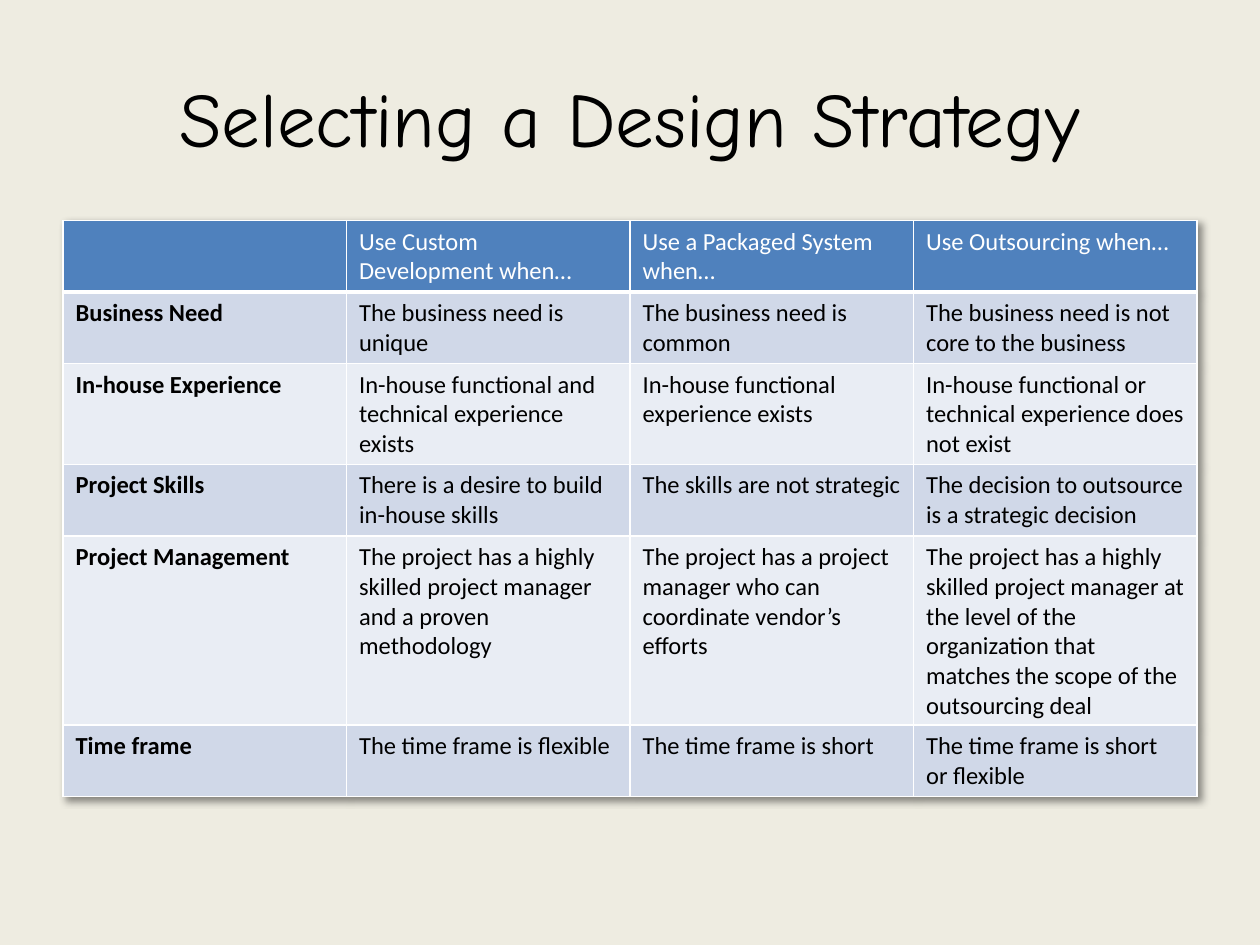
"""Build the slide that compares design strategies in a table."""
from dataclasses import dataclass

from pptx import Presentation
from pptx import util as u
from pptx.dml.color import RGBColor
from pptx.enum import text
from pptx.oxml import parse_xml
from pptx.oxml.ns import nsdecls


@dataclass(frozen=True)
class Theme:
    background: str = "EEECE1"
    ink: str = "000000"
    paper: str = "FFFFFF"
    header: str = "4F81BD"
    bands: tuple = ("D0D8E8", "E9EDF4")
    title_font: str = "Comic Neue"
    body_font: str = "Calibri"
    title_size: int = 44
    body_size: int = 14
    border: int = 1
    header_rule: int = 3


class SlideBuilder:
    def __init__(self, slide, theme):
        self.slide = slide
        self.theme = theme

    def background(self):
        fill = self.slide.background.fill
        fill.solid()
        fill.fore_color.rgb = RGBColor.from_string(self.theme.background)

    def style(self, paragraph, name, size, color, bold=False):
        font = paragraph.font
        font.name, font.size, font.bold = name, u.Pt(size), bold
        font.color.rgb = RGBColor.from_string(color)

    def title(self, words, left, top, width, height):
        shape = self.slide.shapes.add_textbox(*map(u.Inches, (left, top, width, height)))
        frame = shape.text_frame
        frame.word_wrap = True
        frame.vertical_anchor = text.MSO_ANCHOR.MIDDLE
        paragraph = frame.paragraphs[0]
        paragraph.text = words
        paragraph.alignment = text.PP_ALIGN.CENTER
        self.style(paragraph, self.theme.title_font, self.theme.title_size, self.theme.ink)

    def borders(self, cell, bottom):
        properties = cell._tc.get_or_add_tcPr()
        widths = {side: self.theme.border for side in "LRT"} | {"B": bottom}
        for side, width in widths.items():
            properties.append(parse_xml(
                f'<a:ln{side} {nsdecls("a")} w="{u.Pt(width)}"><a:solidFill>'
                f'<a:srgbClr val="{self.theme.paper}"/></a:solidFill></a:ln{side}>'))

    def cell(self, cell, words, row, column):
        theme = self.theme
        is_header = row == 0
        self.borders(cell, theme.header_rule if is_header else theme.border)
        cell.fill.solid()
        fill = theme.header if is_header else theme.bands[(row - 1) % 2]
        cell.fill.fore_color.rgb = RGBColor.from_string(fill)
        cell.text = words
        self.style(cell.text_frame.paragraphs[0], theme.body_font, theme.body_size,
                   theme.paper if is_header else theme.ink,
                   bold=column == 0 and not is_header)

    def table(self, rows, left, top, width, row_height):
        shape = self.slide.shapes.add_table(
            len(rows), len(rows[0]), u.Inches(left), u.Inches(top),
            u.Inches(width), u.Inches(row_height * len(rows)))
        table = shape.table
        table._tbl.tblPr.insert(0, parse_xml(
            f'<a:effectLst {nsdecls("a")}><a:outerShdw blurRad="50800" dist="38100" '
            'dir="2700000" algn="tl" rotWithShape="0"><a:srgbClr val="000000">'
            '<a:alpha val="43000"/></a:srgbClr></a:outerShdw></a:effectLst>'))
        for row, line in enumerate(rows):
            for column, words in enumerate(line):
                self.cell(table.cell(row, column), words, row, column)


STRATEGIES = [
    ("", "Use Custom Development when…", "Use a Packaged System when…",
     "Use Outsourcing when…"),
    ("Business Need", "The business need is unique", "The business need is common",
     "The business need is not core to the business"),
    ("In-house Experience", "In-house functional and technical experience exists",
     "In-house functional experience exists",
     "In-house functional or technical experience does not exist"),
    ("Project Skills", "There is a desire to build in-house skills",
     "The skills are not strategic", "The decision to outsource is a strategic decision"),
    ("Project Management",
     "The project has a highly skilled project manager and a proven methodology",
     "The project has a project manager who can coordinate vendor’s efforts",
     "The project has a highly skilled project manager at the level of the organization "
     "that matches the scope of the outsourcing deal"),
    ("Time frame", "The time frame is flexible", "The time frame is short",
     "The time frame is short or flexible"),
]


def main():
    presentation = Presentation()
    presentation.slide_width, presentation.slide_height = u.Inches(10), u.Inches(7.5)
    slide = presentation.slides.add_slide(presentation.slide_layouts[6])
    builder = SlideBuilder(slide, Theme())
    builder.background()
    builder.title("Selecting a Design Strategy", 0.5, 0.3, 9, 1.25)
    builder.table(STRATEGIES, 0.5, 1.75, 9, 0.41)
    presentation.save("out.pptx")


if __name__ == "__main__":
    main()
